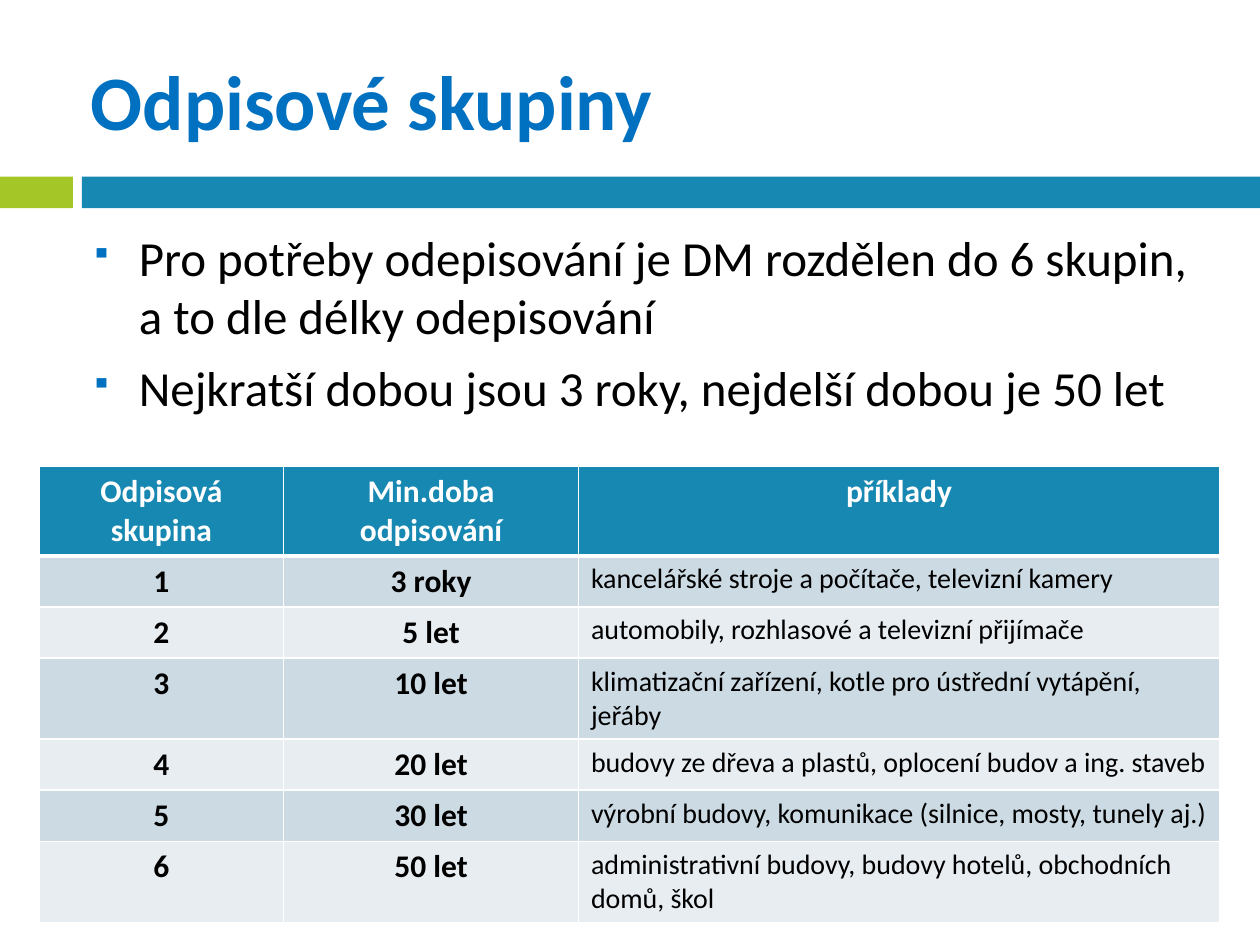
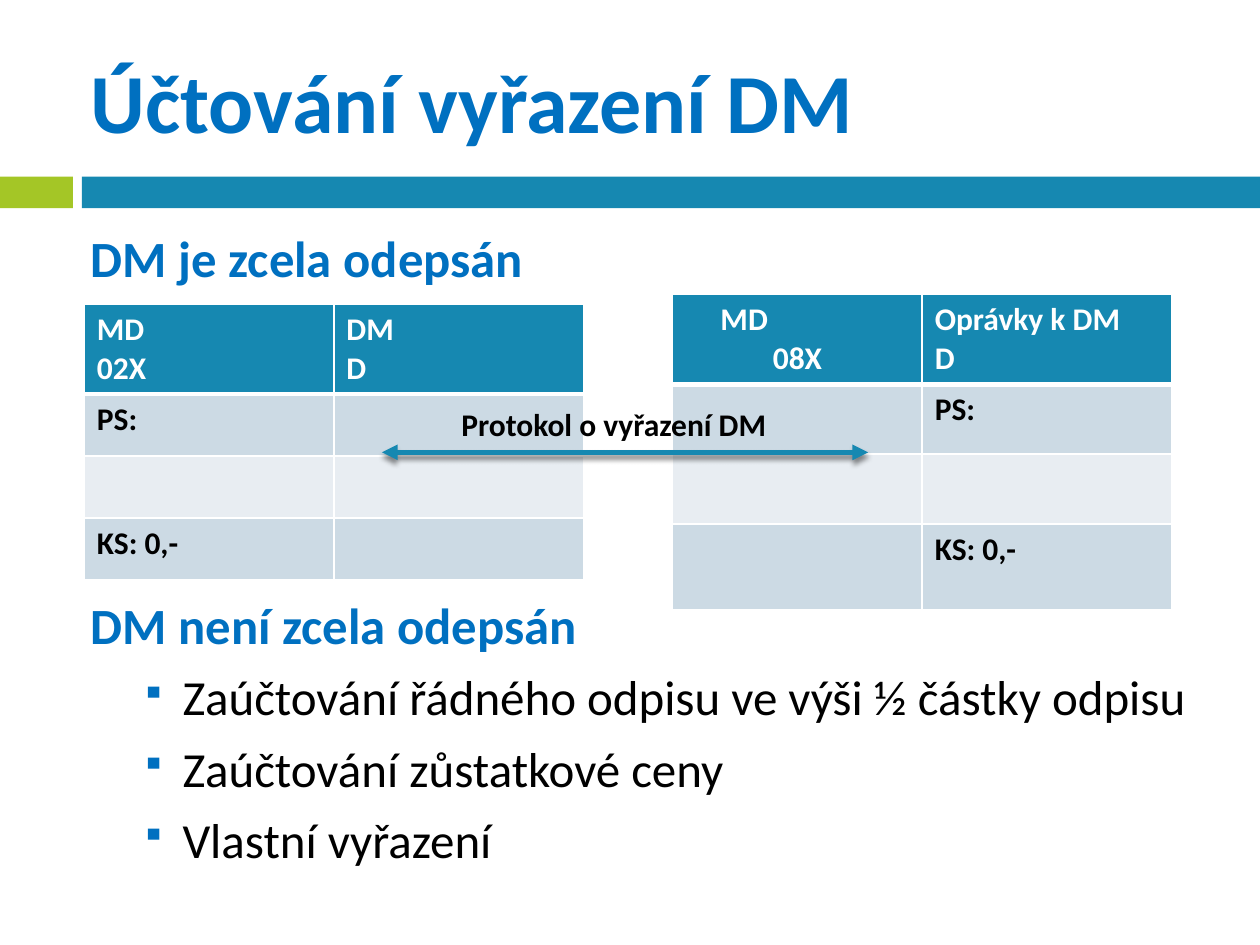
"""Build two slides on depreciation groups and the disposal of fixed assets."""
from lxml import etree
from pptx import Presentation
from pptx import util as u
from pptx.dml.color import RGBColor
from pptx.enum import shapes, text
from pptx.oxml.ns import qn

COLORS = {
    "heading": "0070C0",
    "band": "1688B1",
    "accent": "A4C626",
    "odd_row": "CCDAE4",
    "even_row": "E8EDF2",
    "black": "000000",
    "white": "FFFFFF",
}
FONT = "Calibri"
LEFT, WIDTH = 1.7, 22.66
BODY_TOP = 4.45
INSET = 0.13
LEFT_ALIGN, CENTER = text.PP_ALIGN.LEFT, text.PP_ALIGN.CENTER


class Deck:
    """Hold the shared style and the slide being built."""

    def __init__(self):
        self.presentation = Presentation()
        self.presentation.slide_width = u.Cm(25.4)
        self.presentation.slide_height = u.Cm(19.05)
        self.slide = None

    def color(self, name):
        return RGBColor.from_string(COLORS[name])

    def add_color(self, parent, name):
        return etree.SubElement(parent, qn("a:srgbClr"), val=COLORS[name])

    def style(self, paragraph, size, color, bold=False, align=LEFT_ALIGN):
        paragraph.alignment = align
        font = paragraph.font
        font.name, font.size, font.bold = FONT, u.Pt(size), bold
        font.color.rgb = self.color(color)

    def prepare_frame(self, frame):
        frame.word_wrap = True
        frame.auto_size = text.MSO_AUTO_SIZE.NONE
        frame.margin_left = frame.margin_right = u.Cm(INSET)
        frame.margin_top = frame.margin_bottom = u.Cm(INSET)

    def new_slide(self, title, size):
        self.slide = self.presentation.slides.add_slide(self.presentation.slide_layouts[5])
        self.band(0, 1.47, "accent")
        self.band(1.65, 23.75, "band")
        shape = self.slide.shapes.title
        shape.left, shape.top = u.Cm(LEFT), u.Cm(0.64)
        shape.width, shape.height = u.Cm(WIDTH), u.Cm(2.74)
        frame = shape.text_frame
        self.prepare_frame(frame)
        frame.vertical_anchor = text.MSO_ANCHOR.MIDDLE
        frame.text = title
        self.style(frame.paragraphs[0], size, "heading", True)

    def band(self, left, width, color):
        shape = self.slide.shapes.add_shape(
            shapes.MSO_SHAPE.RECTANGLE, u.Cm(left), u.Cm(3.56), u.Cm(width), u.Cm(0.64))
        shape.shadow.inherit = False
        shape.fill.solid()
        shape.fill.fore_color.rgb = self.color(color)
        shape.line.fill.background()

    def text_box(self, left, top, width, height):
        shape = self.slide.shapes.add_textbox(u.Cm(left), u.Cm(top), u.Cm(width), u.Cm(height))
        self.prepare_frame(shape.text_frame)
        return shape.text_frame

    def body(self, top, height, heading=None, items=(), indent=0.97, hanging=0.97, bullet_size=60):
        frame = self.text_box(LEFT, top, WIDTH, height)
        lines = ([heading] if heading else []) + list(items)
        frame.text = "\n".join(lines)
        for paragraph, line in zip(frame.paragraphs, lines):
            paragraph.space_before = u.Pt(7)
            if line == heading:
                self.style(paragraph, 29, "heading", True)
            else:
                self.bullet(paragraph, indent, hanging, bullet_size)
                self.style(paragraph, 28, "black")

    def bullet(self, paragraph, indent, hanging, size):
        properties = paragraph._p.get_or_add_pPr()
        properties.set("marL", str(u.Cm(indent)))
        properties.set("indent", str(-u.Cm(hanging)))
        self.add_color(etree.SubElement(properties, qn("a:buClr")), "heading")
        etree.SubElement(properties, qn("a:buSzPct"), val=str(size * 1000))
        etree.SubElement(properties, qn("a:buChar"), char="▪")

    def label(self, left, top, width, height, content):
        frame = self.text_box(left, top, width, height)
        frame.text = content
        self.style(frame.paragraphs[0], 18, "black", True)

    def borders(self, cell, top, bottom):
        properties = cell._tc.get_or_add_tcPr()
        sides = {"lnL": 1, "lnR": 1, "lnT": top, "lnB": bottom}
        for position, (side, points) in enumerate(sides.items()):
            line = etree.Element(qn(f"a:{side}"), w=str(u.Pt(points)))
            self.add_color(etree.SubElement(line, qn("a:solidFill")), "white")
            properties.insert(position, line)

    def table(self, left, top, columns, heights, rows, header_align, column_styles):
        table = self.slide.shapes.add_table(
            len(rows), len(columns), u.Cm(left), u.Cm(top),
            u.Cm(sum(columns)), u.Cm(sum(heights))).table
        for column, width in zip(table.columns, columns):
            column.width = u.Cm(width)
        for index, (row, height, contents) in enumerate(zip(table.rows, heights, rows)):
            row.height = u.Cm(height)
            fill = "band" if index == 0 else "odd_row" if index % 2 else "even_row"
            for cell, content, column_style in zip(row.cells, contents, column_styles):
                cell.text = content
                cell.fill.solid()
                cell.fill.fore_color.rgb = self.color(fill)
                self.borders(cell, 3 if index == 1 else 1, 3 if index == 0 else 1)
                for paragraph in cell.text_frame.paragraphs:
                    if index == 0:
                        self.style(paragraph, 18, "white", True, header_align)
                    else:
                        size, bold, align = column_style
                        self.style(paragraph, size, "black", bold, align)
        return table

    def double_arrow(self, left, right, y):
        connector = self.slide.shapes.add_connector(
            shapes.MSO_CONNECTOR.STRAIGHT, u.Cm(left), u.Cm(y), u.Cm(right), u.Cm(y))
        connector.line.width = u.Pt(3)
        connector.line.color.rgb = self.color("band")
        line = connector.line._get_or_add_ln()
        for end in ("headEnd", "tailEnd"):
            etree.SubElement(line, qn(f"a:{end}"), type="triangle")
        effects = etree.SubElement(connector._element.spPr, qn("a:effectLst"))
        shadow = etree.SubElement(
            effects, qn("a:outerShdw"), blurRad=str(u.Pt(3)), dist=str(u.Pt(2.4)),
            dir="5400000", rotWithShape="0")
        etree.SubElement(self.add_color(shadow, "black"), qn("a:alpha"), val="45000")


def add_groups_slide(deck):
    deck.new_slide("Odpisové skupiny", 44)
    deck.body(BODY_TOP, 4.6, items=[
        "Pro potřeby odepisování je DM rozdělen do 6 skupin, a to dle délky odepisování",
        "Nejkratší dobou jsou 3 roky, nejdelší dobou je 50 let",
    ])
    groups = [
        ("3 roky", "kancelářské stroje a počítače, televizní kamery"),
        ("5 let", "automobily, rozhlasové a televizní přijímače"),
        ("10 let", "klimatizační zařízení, kotle pro ústřední vytápění, jeřáby"),
        ("20 let", "budovy ze dřeva a plastů, oplocení budov a ing. staveb"),
        ("30 let", "výrobní budovy, komunikace (silnice, mosty, tunely aj.)"),
        ("50 let", "administrativní budovy, budovy hotelů, obchodních\ndomů, škol"),
    ]
    rows = [("Odpisová skupina", "Min.doba odpisování", "příklady")]
    rows += [(str(number), *group) for number, group in enumerate(groups, 1)]
    single, double = 1.03, 1.63
    deck.table(
        0.79, 9.4, [4.93, 5.94, 12.93],
        [1.78, single, single, double, single, single, double], rows, CENTER,
        [(18, True, CENTER), (18, True, CENTER), (16, False, LEFT_ALIGN)])


def add_disposal_slide(deck):
    deck.new_slide("Účtování vyřazení DM", 48)
    deck.body(BODY_TOP, 1.5, "DM je zcela odepsán")
    deck.body(11.84, 6.9, "DM není zcela odepsán", [
        "Zaúčtování řádného odpisu ve výši ½ částky odpisu",
        "Zaúčtování zůstatkové ceny",
        "Vlastní vyřazení",
    ], indent=1.85, hanging=0.84, bullet_size=70)
    account_columns = [5.03, 5.03]
    account_styles = [(18, True, LEFT_ALIGN)] * 2
    deck.table(
        LEFT, 6.14, account_columns, [1.78, 1.25, 1.25, 1.25],
        [("MD\n02X", "DM\nD"), ("PS:", ""), ("", ""), ("KS: 0,-", "")],
        LEFT_ALIGN, account_styles)
    accumulated = deck.table(
        13.56, 5.94, account_columns, [1.78, 1.41, 1.41, 1.73],
        [("MD\n08X", "Oprávky k DM\nD"), ("", "PS:"), ("", ""), ("", "KS: 0,-")],
        LEFT_ALIGN, account_styles)
    debit, account = accumulated.cell(0, 0).text_frame.paragraphs
    debit._p.get_or_add_pPr().set("marL", str(u.Cm(0.71)))
    account.alignment = CENTER
    deck.double_arrow(7.7, 17.5, 9.12)
    deck.label(9.17, 8.03, 8.79, 1.02, "Protokol o vyřazení DM")


def main():
    deck = Deck()
    add_groups_slide(deck)
    add_disposal_slide(deck)
    deck.presentation.save("out.pptx")


if __name__ == "__main__":
    main()
